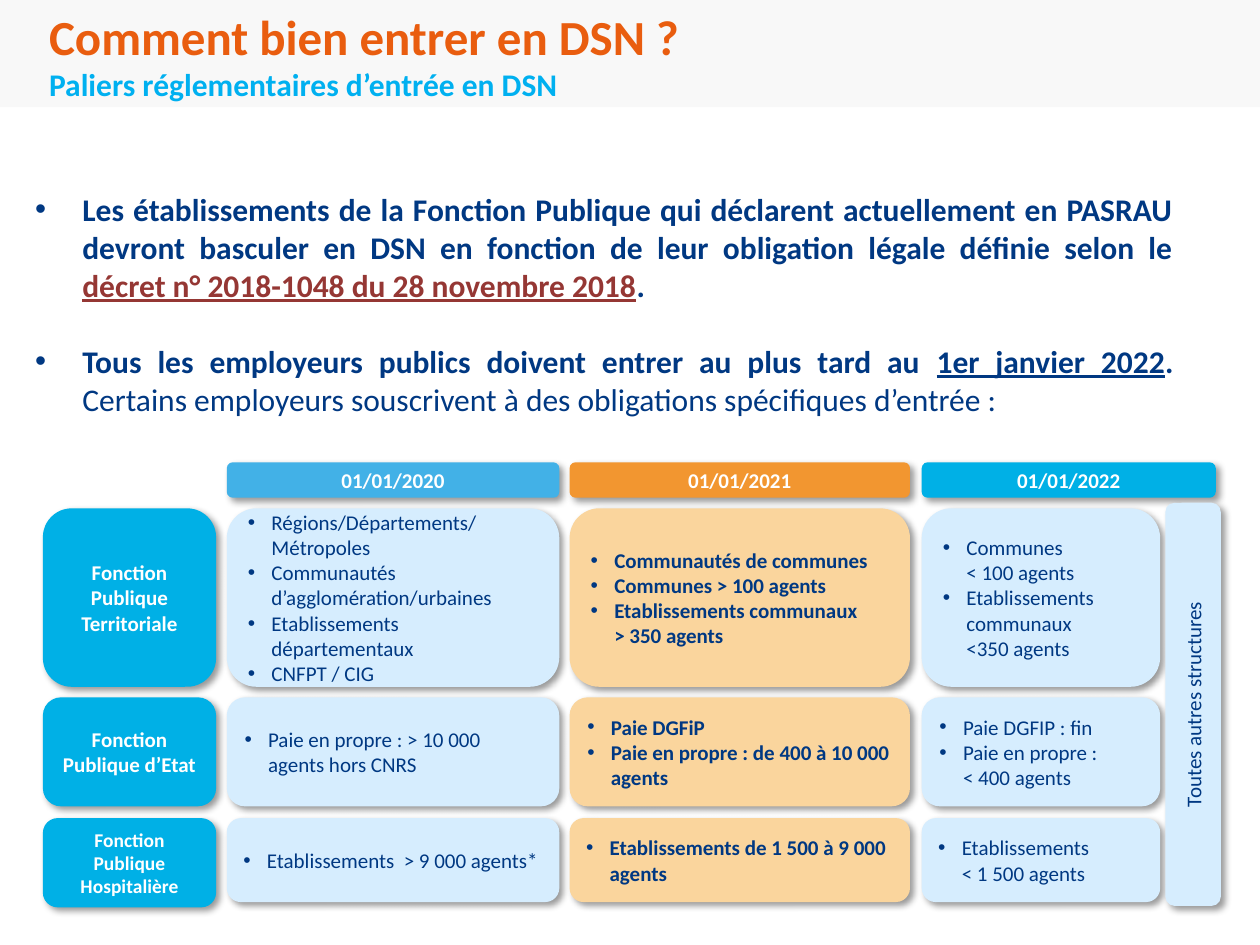
from lxml import etree
from pptx import Presentation
from pptx import util as u
from pptx.dml.color import RGBColor
from pptx.enum import shapes, text
from pptx.oxml.ns import qn

Pt = u.Pt
FONT = "Calibri"
COLORS = {
    "band": "F8F8F8", "title": "E95D0F", "subtitle": "00B0F0", "navy": "003882",
    "decree": "953734", "white": "FFFFFF", "cyan": "00B0E6", "blue": "42B1E7",
    "orange": "F29630", "pale_blue": "D6EDFE", "pale_orange": "FAD59D",
}

# Runs: (text, size, colour, bold, underlined)
TITLE = [
    ("Comment bien entrer en DSN ?\n", 28, "title", True, False),
    ("Paliers réglementaires d’entrée en DSN", 18, "subtitle", True, False),
]
INTRO = [
    [("Les établissements de la Fonction Publique qui déclarent actuellement "
      "en PASRAU devront basculer en DSN en fonction de leur obligation légale "
      "définie selon le ", 18, "navy", True, False),
     ("décret n° 2018-1048 du 28 novembre 2018", 18, "decree", True, True),
     (".", 18, "navy", True, False)],
    [("Tous les employeurs publics doivent entrer au plus tard au ", 18, "navy", True, False),
     ("1er janvier 2022", 18, "navy", True, True),
     (". ", 18, "navy", True, False),
     ("Certains employeurs souscrivent à des obligations spécifiques d’entrée :",
      18, "navy", False, False)],
]

# Columns: left, width, header width, date, header fill, cell fill, bold cells
COLUMNS = [
    (129.6, 190, 190, "01/01/2020", "blue", "pale_blue", False),
    (325.5, 194.5, 194.5, "01/01/2021", "orange", "pale_orange", True),
    (526.7, 136.3, 168, "01/01/2022", "cyan", "pale_blue", False),
]
# Rows: top, height, label, label size, one bullet list per column
ROWS = [
    (290.5, 102, "Fonction Publique Territoriale", 12, [
        ["Régions/Départements/ Métropoles", "Communautés d’agglomération/urbaines",
         "Etablissements départementaux", "CNFPT / CIG"],
        ["Communautés de communes", "Communes > 100 agents",
         "Etablissements communaux \n> 350 agents"],
        ["Communes\n< 100 agents", "Etablissements communaux \n<350 agents"]]),
    (398.5, 62.3, "Fonction Publique d’Etat", 12, [
        ["Paie en propre : > 10 000 agents hors CNRS"],
        ["Paie DGFiP", "Paie en propre : de 400 à 10 000 agents"],
        ["Paie DGFIP : fin", "Paie en propre : \n< 400 agents"]]),
    (467.5, 48, "Fonction Publique Hospitalière", 11.1, [
        ["Etablissements  > 9 000 agents*"],
        ["Etablissements de 1 500 à 9 000 agents"],
        ["Etablissements\n< 1 500 agents"]]),
]
LABEL_LEFT, LABEL_WIDTH = 24.5, 99
LABEL_EXTRA = (0, 0, 3)  # the last label is slightly taller than its row
HEADER_TOP, HEADER_HEIGHT = 264.2, 20.2
OTHERS = "Toutes autres structures"
OTHERS_BOX = (566.6, 386.6, 230.4, 31.7)

LEFT, CENTER, JUSTIFY = (text.PP_ALIGN.LEFT, text.PP_ALIGN.CENTER, text.PP_ALIGN.JUSTIFY)


def rgb(name):
    return RGBColor.from_string(COLORS[name])


def write(p, runs, align=LEFT, indent=0):
    """Fill a paragraph; a positive indent makes it a hanging bullet."""
    p.alignment = align
    if indent:
        pPr = p._p.get_or_add_pPr()
        pPr.set("marL", str(Pt(indent)))
        pPr.set("indent", str(-Pt(indent)))
        etree.SubElement(pPr, qn("a:buFont"), typeface="Arial")
        etree.SubElement(pPr, qn("a:buChar"), char="•")
    for words, size, color, bold, underlined in runs:
        for i, line in enumerate(words.split("\n")):
            if i:
                p.add_line_break()
            if not line:
                continue
            r = p.add_run()
            r.text = line
            r.font.name, r.font.size = FONT, Pt(size)
            r.font.bold, r.font.underline = bold, underlined
            r.font.color.rgb = rgb(color)


def fill_frame(tf, paragraphs, align=LEFT, indent=0, gap=0):
    tf.word_wrap = True
    for i, runs in enumerate(paragraphs):
        p = tf.add_paragraph() if i else tf.paragraphs[0]
        if i and gap:
            p.space_before = Pt(gap)
        write(p, runs, align, indent)


def add_shadow(sp):
    effects = sp._element.spPr.find(qn("a:effectLst"))
    shadow = etree.SubElement(effects, qn("a:outerShdw"), blurRad=str(Pt(4)),
                              dist=str(Pt(3)), dir="2700000", algn="tl", rotWithShape="0")
    color = etree.SubElement(shadow, qn("a:srgbClr"), val="000000")
    etree.SubElement(color, qn("a:alpha"), val="40000")


def add_block(s, kind, box, fill):
    sp = s.shapes.add_shape(kind, *map(Pt, box))
    sp.shadow.inherit = False
    sp.fill.solid()
    sp.fill.fore_color.rgb = rgb(fill)
    sp.line.fill.background()
    return sp


def add_card(s, box, fill, lines, size=12, color="navy", bold=False, align=CENTER, indent=0):
    """Rounded, shadowed block with one paragraph per line."""
    sp = add_block(s, shapes.MSO_SHAPE.ROUNDED_RECTANGLE, box, fill)
    add_shadow(sp)
    sp.text_frame.vertical_anchor = text.MSO_ANCHOR.MIDDLE
    fill_frame(sp.text_frame, [[(line, size, color, bold, False)] for line in lines],
               align, indent)
    return sp


def add_text(s, box, paragraphs, **layout):
    fill_frame(s.shapes.add_textbox(*map(Pt, box)).text_frame, paragraphs, **layout)


def main():
    prs = Presentation()
    prs.slide_width, prs.slide_height = Pt(720), Pt(540)
    s = prs.slides.add_slide(prs.slide_layouts[6])

    add_block(s, shapes.MSO_SHAPE.RECTANGLE, (0, 0, 720, 61.2), "band")
    add_text(s, (21, 0, 633.6, 51), [TITLE])
    add_text(s, (13, 105, 664.6, 250), INTRO, align=JUSTIFY, indent=27, gap=22)

    for left, _, width, date, fill, _, _ in COLUMNS:
        add_card(s, (left, HEADER_TOP, width, HEADER_HEIGHT), fill, [date],
                 color="white", bold=True)
    for row, (top, height, label, size, cells) in enumerate(ROWS):
        add_card(s, (LABEL_LEFT, top, LABEL_WIDTH, height + LABEL_EXTRA[row]), "cyan",
                 [label], size=size, color="white", bold=True)
        for (left, width, _, _, _, fill, bold), lines in zip(COLUMNS, cells):
            add_card(s, (left, top, width, height), fill, lines,
                     bold=bold, align=LEFT, indent=13.5)

    add_card(s, OTHERS_BOX, "pale_blue", [OTHERS]).rotation = 270
    prs.save("out.pptx")


if __name__ == "__main__":
    main()
